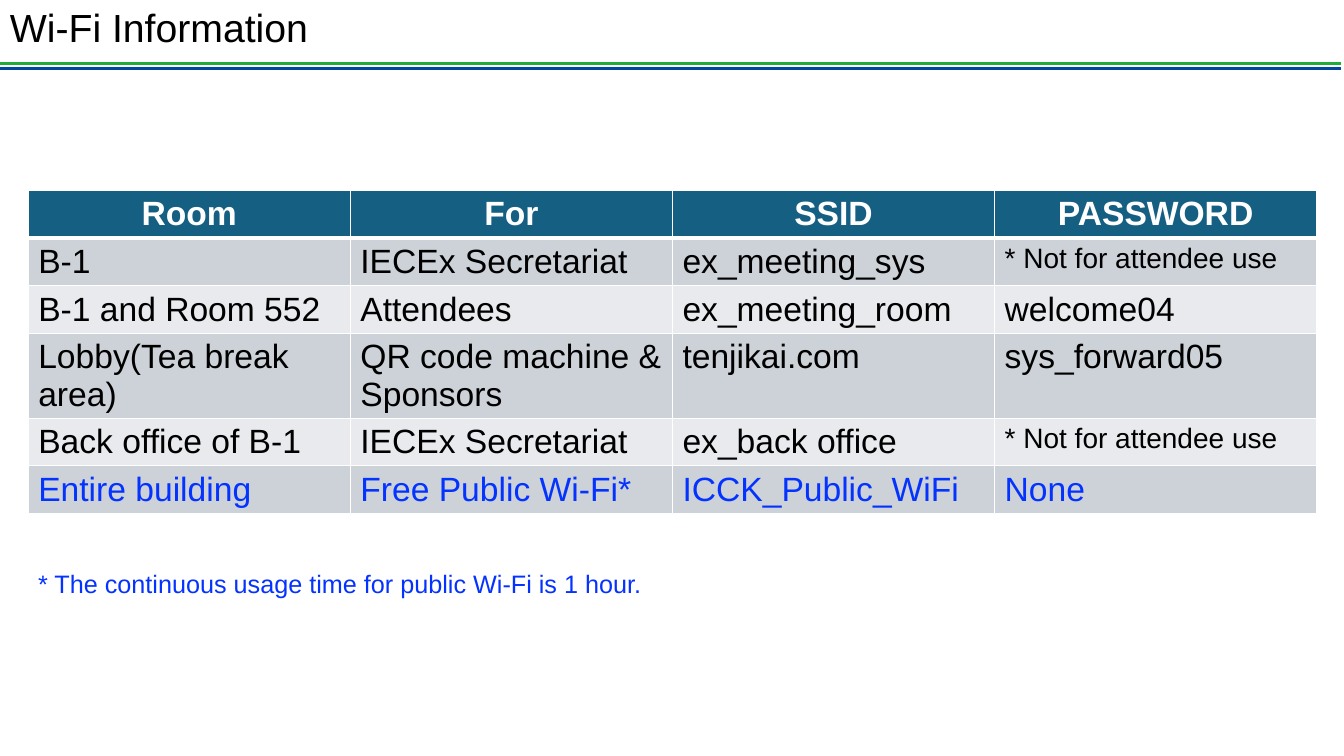
import pptx
import pptx.util
import pptx.dml.color
import pptx.enum.shapes
import pptx.enum.text
import pptx.oxml
import pptx.oxml.ns
from lxml import etree

TITLE = "Wi-Fi Information"
FOOTNOTE = "* The continuous usage time for public Wi-Fi is 1 hour."
HEADINGS = ["Room", "For", "SSID", "PASSWORD"]
NETWORKS = [
    ("B-1", "IECEx Secretariat", "ex_meeting_sys", "* Not for attendee use"),
    ("B-1 and Room 552", "Attendees", "ex_meeting_room", "welcome04"),
    ("Lobby(Tea break area)", "QR code machine & Sponsors", "tenjikai.com", "sys_forward05"),
    ("Back office of B-1", "IECEx Secretariat", "ex_back office", "* Not for attendee use"),
    ("Entire building", "Free Public Wi-Fi*", "ICCK_Public_WiFi", "None"),
]
COLORS = {
    "text": "000000", "public": "0432FF", "white": "FFFFFF",
    "header": "156082", "odd": "CCD2D8", "even": "E8EAED",
    "green rule": "21AB38", "blue rule": "00469C",
}
RULES = [("green rule", 0.63), ("blue rule", 0.68)]
MARGIN = 0.28
TABLE_TOP, COLUMN_WIDTH, ROW_HEIGHT = 1.89, 3.195, 0.41

Inches, Pt = pptx.util.Inches, pptx.util.Pt
MIDDLE = pptx.enum.text.MSO_ANCHOR.MIDDLE


def rgb(name):
    return pptx.dml.color.RGBColor.from_string(COLORS[name])


def style(paragraph, size, color, bold=False):
    for run in paragraph.runs:
        run.font.name = "Arial"
        run.font.size = Pt(size)
        run.font.bold = bold
        run.font.color.rgb = rgb(color)


def add_text(slide, text, box, size, color):
    frame = slide.shapes.add_textbox(*map(Inches, box)).text_frame
    frame.word_wrap = True
    frame.vertical_anchor = MIDDLE
    frame.text = text
    style(frame.paragraphs[0], size, color)
    return frame.paragraphs[0]


def add_rule(slide, color, y):
    rule = slide.shapes.add_connector(
        pptx.enum.shapes.MSO_CONNECTOR.STRAIGHT,
        Inches(-0.01), Inches(y), Inches(13.3), Inches(y))
    rule.line.color.rgb = rgb(color)
    rule.line.width = Pt(2.25)
    etree.SubElement(rule._element.spPr, pptx.oxml.ns.qn("a:effectLst"))


def set_borders(cell, widths):
    """Draw white borders; widths maps each side (L, R, T, B) to points."""
    properties = cell._tc.get_or_add_tcPr()
    for position, (side, width) in enumerate(widths.items()):
        border = pptx.oxml.parse_xml(
            f'<a:ln{side} {pptx.oxml.ns.nsdecls("a")} w="{Pt(width)}"><a:solidFill>'
            f'<a:srgbClr val="{COLORS["white"]}"/></a:solidFill></a:ln{side}>')
        properties.insert(position, border)


def add_network_table(slide):
    rows = [HEADINGS, *NETWORKS]
    table = slide.shapes.add_table(
        len(rows), len(HEADINGS), Inches(MARGIN), Inches(TABLE_TOP),
        Inches(COLUMN_WIDTH * len(HEADINGS)), Inches(ROW_HEIGHT * len(rows))).table
    for r, texts in enumerate(rows):
        is_header, is_public = r == 0, r == len(rows) - 1
        fill = "header" if is_header else "odd" if r % 2 else "even"
        color = "white" if is_header else "public" if is_public else "text"
        for c, text in enumerate(texts):
            cell = table.cell(r, c)
            cell.text = text
            cell.fill.solid()
            cell.fill.fore_color.rgb = rgb(fill)
            paragraph = cell.text_frame.paragraphs[0]
            if is_header:
                paragraph.alignment = pptx.enum.text.PP_ALIGN.CENTER
            style(paragraph, 20 if text.startswith("*") else 24, color, is_header)
            set_borders(cell, {"L": 1, "R": 1, "T": 3 if r == 1 else 1,
                               "B": 3 if is_header else 1})


def main():
    deck = pptx.Presentation()
    deck.slide_width, deck.slide_height = Inches(13.33), Inches(7.5)
    slide = deck.slides.add_slide(deck.slide_layouts[6])
    for color, y in RULES:
        add_rule(slide, color, y)
    add_network_table(slide)
    title = add_text(slide, TITLE, (0, 0, 10.99, 0.59), 28, "text")
    title.line_spacing = 0.9
    add_text(slide, FOOTNOTE, (MARGIN, 5.59, 6.24, 0.4), 18, "public")
    deck.save("out.pptx")


if __name__ == "__main__":
    main()
